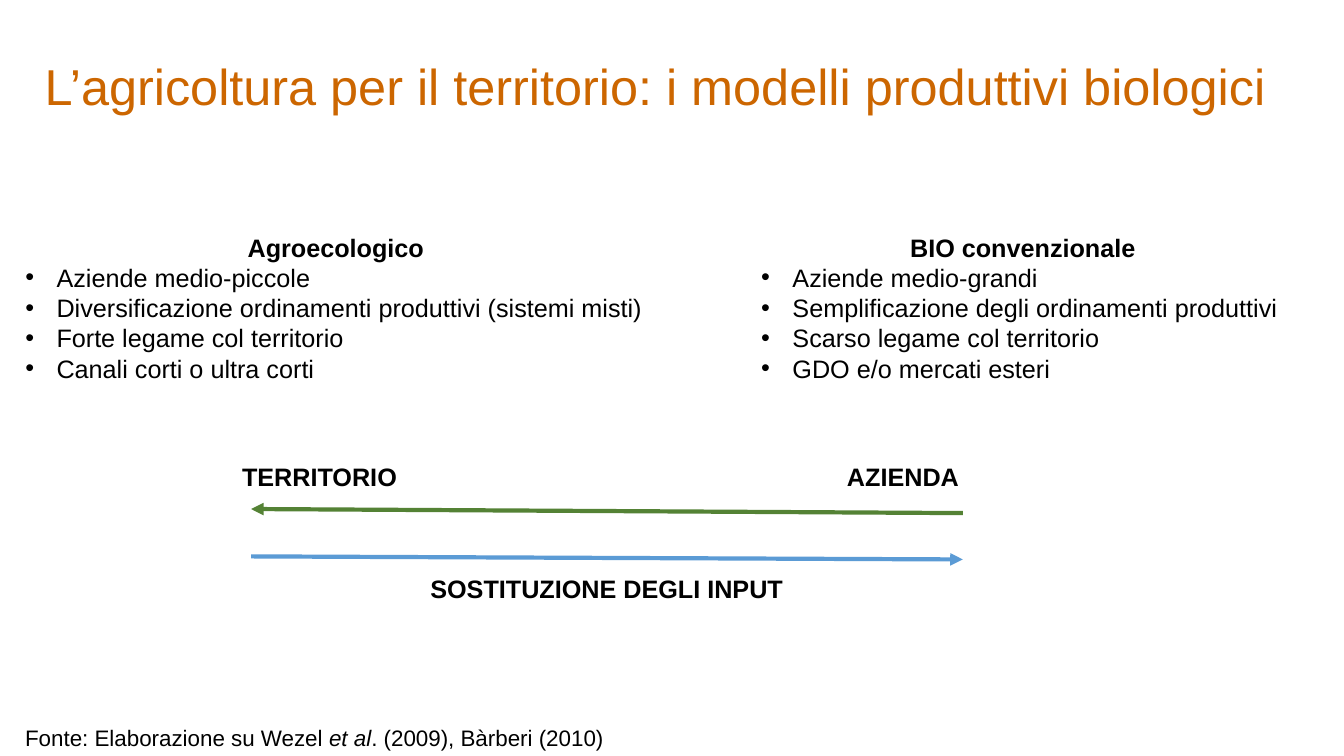
from dataclasses import dataclass

from lxml.etree import SubElement
from pptx import Presentation
from pptx.dml.color import RGBColor
from pptx.enum.shapes import MSO_CONNECTOR as Conn
from pptx.enum.text import MSO_ANCHOR as Anchor, MSO_AUTO_SIZE as Auto, PP_ALIGN as Align
from pptx.oxml.ns import qn
from pptx.util import Inches, Pt

ORANGE = RGBColor(0xCC, 0x66, 0x00)
BLACK = RGBColor(0, 0, 0)
GREEN = RGBColor(0x54, 0x82, 0x35)
BLUE = RGBColor(0x5B, 0x9B, 0xD5)

WIDE, HIGH = Inches(13.33), Inches(7.5)
HANG = Inches(0.31)
EDGE = 1.13  # left margin, percent of the width

HEAD = dict(size=Pt(36), name="Arial")
BODY = dict(size=Pt(18), name="Arial", bold=False)
BOLD = dict(BODY, bold=True)
NOTE = dict(size=Pt(16), name="Arial")


def across(share: float) -> int:
    return round(WIDE * share / 100)


def down(share: float) -> int:
    return round(HIGH * share / 100)


@dataclass
class Box:
    """A frame in percent of the slide's width and height."""
    left: float
    top: float
    width: float
    height: float

    def place(self) -> dict:
        return dict(left=across(self.left), top=down(self.top),
                    width=across(self.width), height=down(self.height))


@dataclass
class Model:
    slot: int
    box: Box
    name: str
    points: list[str]


@dataclass
class Arrow:
    start: tuple[float, float]
    end: tuple[float, float]
    color: RGBColor


MODELS = [
    Model(1, Box(EDGE, 30, 47.71, 21.6), "Agroecologico", [
        "Aziende medio-piccole",
        "Diversificazione ordinamenti produttivi (sistemi misti)",
        "Forte legame col territorio",
        "Canali corti o ultra corti"]),
    Model(2, Box(55.89, 30, 40.43, 21.6), "BIO convenzionale", [
        "Aziende medio-grandi",
        "Semplificazione degli ordinamenti produttivi",
        "Scarso legame col territorio",
        "GDO e/o mercati esteri"]),
]

ARROWS = [
    Arrow((71.64, 67.87), (18.68, 67.33), GREEN),
    Arrow((18.68, 73.6), (71.64, 74), BLUE),
]


def apply(target, values: dict) -> None:
    for key, value in values.items():
        setattr(target, key, value)


def write(para, text: str, look: dict, color=BLACK, italic=False) -> None:
    run = para.add_run()
    run.text = text
    apply(run.font, dict(look, italic=italic))
    run.font.color.rgb = color


def add_title(slide, text: str) -> None:
    title = slide.shapes.title
    apply(title, Box(EDGE, 2.8, 95.27, 17.87).place())
    apply(title.text_frame, dict(word_wrap=True, auto_size=Auto.NONE,
                                 vertical_anchor=Anchor.MIDDLE))
    para = title.text_frame.paragraphs[0]
    apply(para, dict(alignment=Align.CENTER, line_spacing=0.9))
    write(para, text, HEAD, ORANGE)


def add_model(slide, model: Model) -> None:
    """Fill a body placeholder with a centred heading and its bullets."""
    body = slide.placeholders[model.slot]
    apply(body, model.box.place())
    frame = body.text_frame
    apply(frame, dict(word_wrap=True, auto_size=Auto.NONE,
                      vertical_anchor=Anchor.TOP))
    for row, text in enumerate([model.name, *model.points]):
        para = frame.add_paragraph() if row else frame.paragraphs[0]
        apply(para, dict(alignment=Align.LEFT if row else Align.CENTER,
                         line_spacing=1.0, space_before=Pt(0), space_after=Pt(0)))
        props = para._p.get_or_add_pPr()
        props.set("marL", str(HANG if row else 0))
        props.set("indent", str(-HANG if row else 0))
        if row:
            SubElement(props, qn("a:buChar"), char="•")
        else:
            SubElement(props, qn("a:buNone"))
        write(para, text, BODY if row else BOLD)


def add_text(slide, box: Box, wrap: bool = True):
    """Add a text box and return its frame."""
    frame = slide.shapes.add_textbox(**box.place()).text_frame
    apply(frame, dict(word_wrap=wrap, auto_size=Auto.SHAPE_TO_FIT_TEXT))
    return frame


def add_poles(slide, left: str, right: str) -> None:
    """Write both ends of the axis on one line, split by a tab stop."""
    frame = add_text(slide, Box(14.33, 60.4, 60.69, 5.33))
    frame.margin_left = Inches(0.49)
    para = frame.paragraphs[0]
    stops = SubElement(para._p.get_or_add_pPr(), qn("a:tabLst"))
    SubElement(stops, qn("a:tab"), pos=str(Inches(6)), algn="l")
    write(para, f"{left}\t{right}", BOLD)


def add_arrow(slide, arrow: Arrow) -> None:
    ends = [fit(share) for point in (arrow.start, arrow.end)
            for fit, share in zip((across, down), point)]
    link = slide.shapes.add_connector(Conn.STRAIGHT, *ends)
    link.line.width = Pt(3)
    link.line.color.rgb = arrow.color
    props = link._element.spPr
    SubElement(props.find(qn("a:ln")), qn("a:tailEnd"), type="triangle")
    SubElement(props, qn("a:effectLst"))


def main() -> None:
    deck = Presentation()
    apply(deck, dict(slide_width=WIDE, slide_height=HIGH))
    slide = deck.slides.add_slide(deck.slide_layouts.get_by_name("Two Content"))

    add_title(slide, "L’agricoltura per il territorio: i modelli produttivi biologici")
    for model in MODELS:
        add_model(slide, model)

    source = add_text(slide, Box(EDGE, 95.07, 75.02, 4.93)).paragraphs[0]
    write(source, "Fonte: Elaborazione su Wezel ", NOTE)
    write(source, "et al", NOTE, italic=True)
    write(source, ". (2009), Bàrberi (2010)", NOTE)

    swap = add_text(slide, Box(31.28, 75.2, 28.06, 5.33), wrap=False)
    write(swap.paragraphs[0], "SOSTITUZIONE DEGLI INPUT", BOLD)
    add_poles(slide, "TERRITORIO", "AZIENDA")
    for arrow in ARROWS:
        add_arrow(slide, arrow)

    deck.save("out.pptx")


if __name__ == "__main__":
    main()
